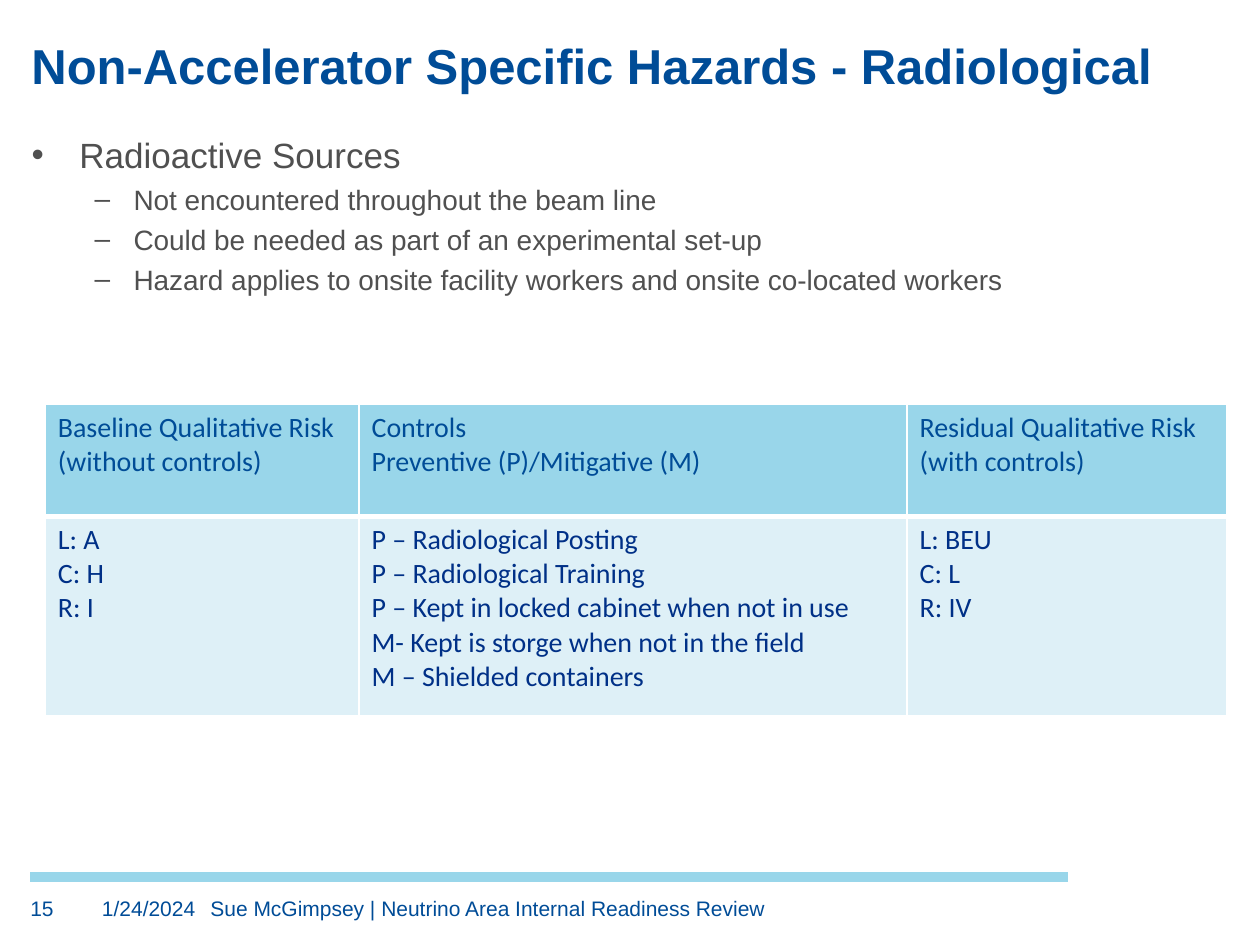
from lxml import etree
from pptx import Presentation
from pptx.dml.color import RGBColor
from pptx.enum.shapes import MSO_CONNECTOR
from pptx.enum.text import MSO_ANCHOR
from pptx.oxml.ns import qn
from pptx.util import Inches, Pt

STRAIGHT = MSO_CONNECTOR.STRAIGHT
TOP, BOTTOM = MSO_ANCHOR.TOP, MSO_ANCHOR.BOTTOM
BLUE, NAVY, GRAY = "004C97", "003087", "505050"
SKY, PALE, WHITE = "99D6EA", "DEF0F7", "FFFFFF"


def color(value):
    return RGBColor.from_string(value)


def write(frame, lines, size=12, font="Arial", fill=BLUE, bold=False, anchor=TOP, margin=0):
    """Fill a text frame, one paragraph per line, and return the paragraphs."""
    frame.word_wrap = True
    frame.vertical_anchor = anchor
    if margin is not None:
        frame.margin_left = frame.margin_right = Inches(margin)
        frame.margin_top = frame.margin_bottom = Inches(margin)
    frame.text = "\n".join(lines)
    for paragraph in frame.paragraphs:
        for run in paragraph.runs:
            run.font.size = Pt(size)
            run.font.name = font
            run.font.bold = bold
            run.font.color.rgb = color(fill)
    return frame.paragraphs


prs = Presentation()
prs.slide_width, prs.slide_height = Inches(10), Inches(7.5)
slide = prs.slides.add_slide(prs.slide_layouts[6])
shapes = slide.shapes

# Footer rule
rule = shapes.add_connector(STRAIGHT, Inches(0.24), Inches(6.96), Inches(8.48), Inches(6.96))
rule.line.color.rgb = color(SKY)
rule.line.width = Pt(6)
etree.SubElement(rule._element.spPr, qn("a:effectLst"))

# Title
title = shapes.add_textbox(Inches(0.25), Inches(0.28), Inches(9.5), Inches(0.47))
write(title.text_frame, ["Non-Accelerator Specific Hazards - Radiological"],
      size=28, bold=True, anchor=BOTTOM)

# Hazard bullets: level, text
hazards = [
    (0, "Radioactive Sources"),
    (1, "Not encountered throughout the beam line"),
    (1, "Could be needed as part of an experimental set-up"),
    (1, "Hazard applies to onsite facility workers and onsite co-located workers"),
]
# Each level: bullet, left margin, hanging indent, size
levels = [("•", 0.38, -0.38, 20), ("–", 0.81, -0.31, 16)]
body = shapes.add_textbox(Inches(0.25), Inches(1.06), Inches(9.48), Inches(1.62))
paragraphs = write(body.text_frame, [text for _, text in hazards], fill=GRAY)
for index, (paragraph, (level, _)) in enumerate(zip(paragraphs, hazards)):
    bullet, left, hanging, size = levels[level]
    paragraph.level = level
    properties = paragraph._p.get_or_add_pPr()
    properties.set("marL", str(Inches(left)))
    properties.set("indent", str(Inches(hanging)))
    etree.SubElement(properties, qn("a:buFont"), typeface="Arial")
    etree.SubElement(properties, qn("a:buChar"), char=bullet)
    if index:
        paragraph.space_before = Pt(3.7)
    paragraph.runs[0].font.size = Pt(size)

# Footer: slide number, date, presenter
for left, width, text in [
    (0.24, 0.45, "15"),
    (0.81, 1, "1/24/2024"),
    (1.67, 6.85, "Sue McGimpsey | Neutrino Area Internal Readiness Review"),
]:
    footer = shapes.add_textbox(Inches(left), Inches(7.11), Inches(width), Inches(0.26))
    write(footer.text_frame, [text])

# Risk table
risk_rows = [
    [["Baseline Qualitative Risk (without controls)"],
     ["Controls", "Preventive (P)/Mitigative (M)"],
     ["Residual Qualitative Risk", "(with controls)"]],
    [["L: A", "C: H", "R: I"],
     ["P – Radiological Posting",
      "P – Radiological Training",
      "P – Kept in locked cabinet when not in use",
      "M- Kept is storge when not in the field",
      "M – Shielded containers"],
     ["L: BEU", "C: L", "R: IV"]],
]
# Each row: height, fill, text colour, border widths
row_styles = [
    (0.89, SKY, BLUE, {"L": 1, "R": 1, "T": 1, "B": 3}),
    (1.58, PALE, NAVY, {"L": 1, "R": 1, "T": 3, "B": 1}),
]
risks = shapes.add_table(2, 3, Inches(0.36), Inches(3.21), Inches(9.38), Inches(2.47)).table
for column, width in zip(risks.columns, [2.49, 4.35, 2.54]):
    column.width = Inches(width)
for row, contents, (height, fill, ink, borders) in zip(risks.rows, risk_rows, row_styles):
    row.height = Inches(height)
    for cell, lines in zip(row.cells, contents):
        write(cell.text_frame, lines, size=16, font="Calibri", fill=ink, margin=None)
        cell.fill.solid()
        cell.fill.fore_color.rgb = color(fill)
        properties = cell._tc.get_or_add_tcPr()
        for position, (side, points) in enumerate(borders.items()):
            border = etree.Element(qn("a:ln" + side), w=str(Pt(points)))
            solid = etree.SubElement(border, qn("a:solidFill"))
            etree.SubElement(solid, qn("a:srgbClr"), val=WHITE)
            properties.insert(position, border)

prs.save("out.pptx")
